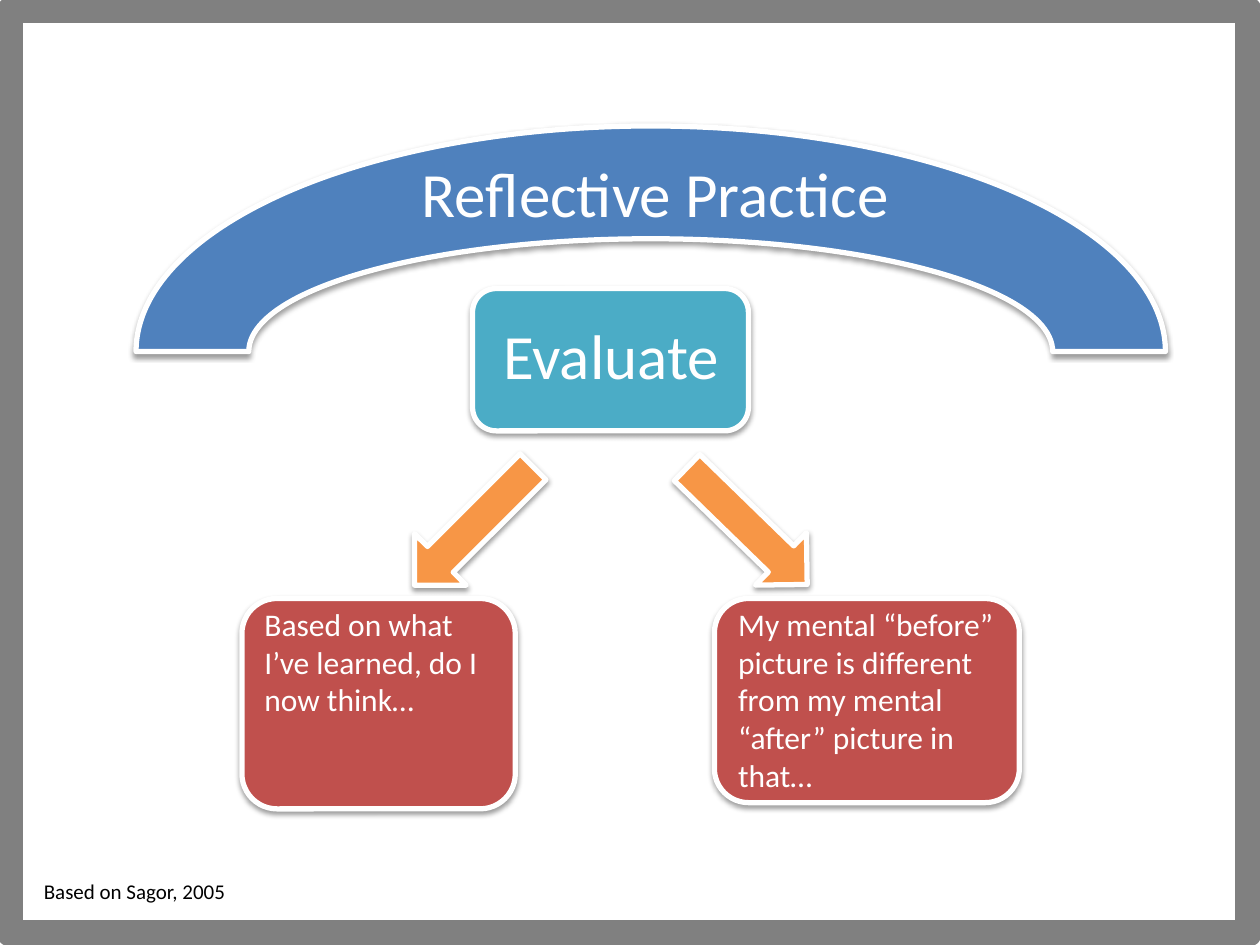
from lxml import etree
from pptx import Presentation
from pptx.dml.color import RGBColor
from pptx.enum.shapes import MSO_SHAPE as Shape
from pptx.enum.text import MSO_ANCHOR as Anchor, MSO_AUTO_SIZE as AutoSize, PP_ALIGN as Align
from pptx.oxml.ns import qn
from pptx.util import Inches, Pt

WHITE, BLACK, GRAY = "FFFFFF", "000000", "808080"
BLUE, TEAL, RED, ORANGE = "4F81BD", "4BACC6", "C0504D", "F79646"


def color(hex_string):
    return RGBColor.from_string(hex_string)


def add_shadow(shape):
    """Soft black shadow just below the shape."""
    effects = shape._element.spPr.find(qn("a:effectLst"))
    shadow = etree.SubElement(effects, qn("a:outerShdw"), blurRad="40000",
                              dist="20000", dir="5400000", rotWithShape="0")
    black = etree.SubElement(shadow, qn("a:srgbClr"), val=BLACK)
    etree.SubElement(black, qn("a:alpha"), val="38000")


def add_block(shapes, kind, box, fill, line=WHITE, line_width=3, shadow=True):
    shape = shapes.add_shape(kind, *map(Inches, box))
    shape.fill.solid()
    shape.fill.fore_color.rgb = color(fill)
    shape.line.color.rgb = color(line)
    shape.line.width = Pt(line_width)
    shape.shadow.inherit = False
    if shadow:
        add_shadow(shape)
    return shape


def add_text(shapes, box, text, size, text_color=WHITE):
    text_box = shapes.add_textbox(*map(Inches, box))
    frame = text_box.text_frame
    frame.word_wrap = True
    frame.auto_size = AutoSize.SHAPE_TO_FIT_TEXT
    paragraph = frame.paragraphs[0]
    paragraph.text = text
    paragraph.font.name = "Calibri"
    paragraph.font.size = Pt(size)
    paragraph.font.color.rgb = color(text_color)
    return frame


def add_card(slide, box, fill, text_area, text, size):
    """Rounded rectangle grouped with its text."""
    group = slide.shapes.add_group_shape()
    add_block(group.shapes, Shape.ROUNDED_RECTANGLE, box, fill)
    return add_text(group.shapes, text_area, text, size)


def center_label(frame):
    frame.auto_size = AutoSize.NONE
    frame.vertical_anchor = Anchor.MIDDLE
    frame.margin_left = frame.margin_right = Inches(0.15)
    frame.margin_top = frame.margin_bottom = Inches(0.15)
    frame.paragraphs[0].alignment = Align.CENTER
    frame.paragraphs[0].line_spacing = 0.9


def main():
    presentation = Presentation()
    presentation.slide_width, presentation.slide_height = Inches(10), Inches(7.5)
    slide = presentation.slides.add_slide(presentation.slide_layouts[6])
    shapes = slide.shapes

    # Slide frame and source note
    add_block(shapes, Shape.RECTANGLE, (0.08, 0.08, 9.83, 7.33), WHITE, GRAY, 15, shadow=False)
    add_text(shapes, (0.25, 6.92, 1.67, 0.3), "Based on Sagor, 2005", 12, BLACK)

    # Arrows from the evaluation to the two questions
    for left, rotation in ((3.47, 45), (5.64, 314.2)):
        arrow = add_block(shapes, Shape.DOWN_ARROW, (left, 3.51, 0.58, 1.33), ORANGE)
        arrow.rotation = rotation

    # Question cards
    add_card(slide, (1.92, 4.75, 2.17, 1.67), RED, (2, 4.75, 2.08, 1.55),
             "Based on what I’ve learned, do I now think…", 18)
    add_card(slide, (5.67, 4.75, 2.42, 1.62), RED, (5.76, 4.75, 2.32, 1.62),
             "My mental “before” picture is different from my mental “after” picture in that…", 18)

    # Evaluation card
    center_label(add_card(slide, (3.75, 2.29, 2.19, 1.13), TEAL,
                          (3.81, 2.34, 2.08, 1.02), "Evaluate", 36))

    # Title arch
    add_block(shapes, Shape.BLOCK_ARC, (1.08, 1, 8.17, 3.58), BLUE)
    add_text(shapes, (3.25, 1.18, 4.08, 0.71), "Reflective Practice", 36)

    presentation.save("out.pptx")


if __name__ == "__main__":
    main()
